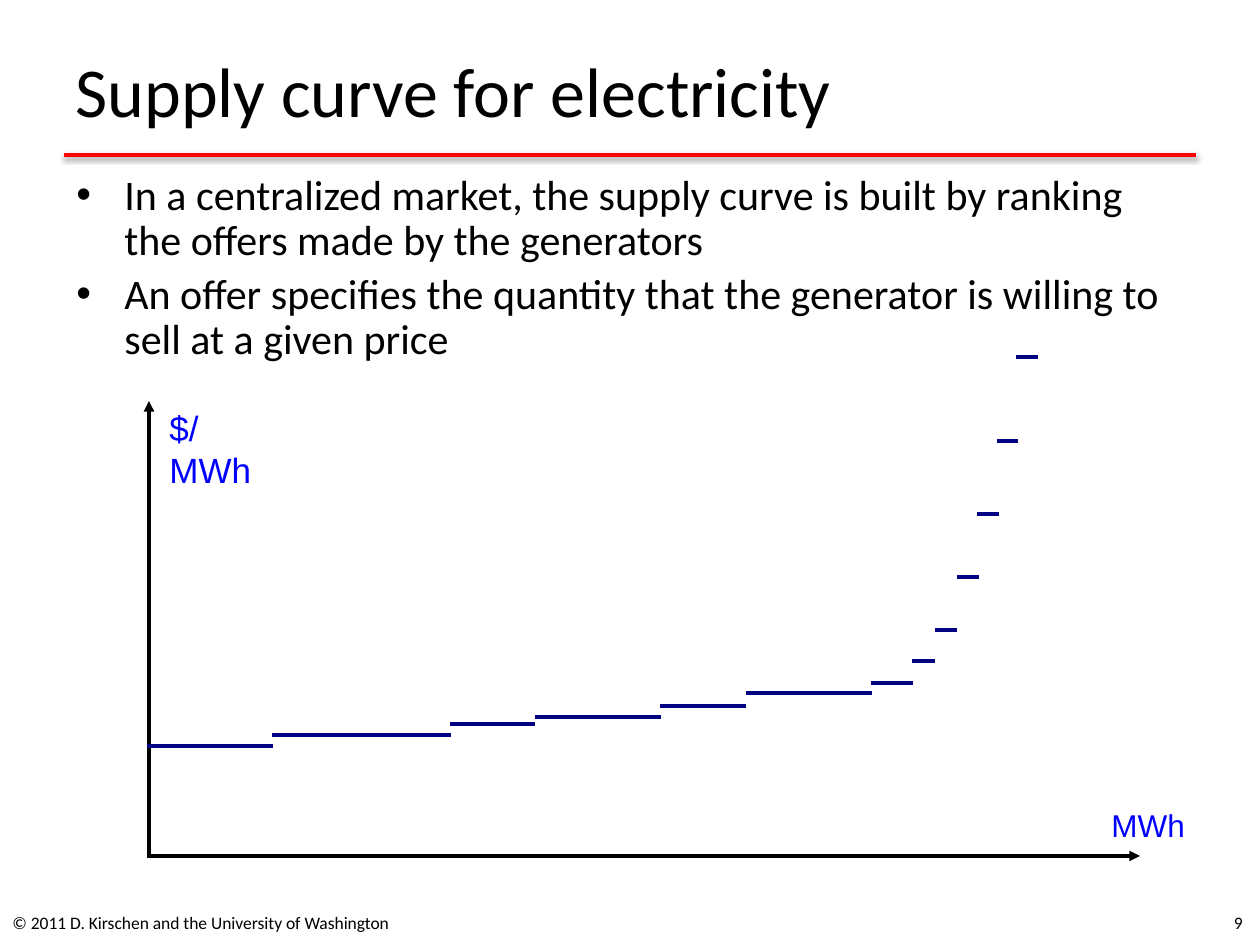
import pptx
import pptx.dml.color
import pptx.enum.shapes
import pptx.enum.text
import pptx.oxml
import pptx.oxml.ns
import pptx.util

PX = 914400 / 126  # EMU in one px
COLORS = {"text": "000000", "rule": "FF0000", "label": "0000FF", "offer": "000080"}
ALIGN = pptx.enum.text.PP_ALIGN
ANCHOR = pptx.enum.text.MSO_ANCHOR
NS = pptx.oxml.ns.nsdecls("a")


def emu(*lengths):
    return [round(length * PX) for length in lengths]


def color(name):
    return pptx.dml.color.RGBColor.from_string(COLORS[name])


class Deck:
    """Holds the style and the current slide."""

    font = "Calibri"

    def __init__(self):
        self.prs = pptx.Presentation()
        self.prs.slide_width, self.prs.slide_height = emu(1260, 945)
        self.slide = self.prs.slides.add_slide(self.prs.slide_layouts[5])

    def fill_text(self, tf, lines, size, fill="text", font=None, align=ALIGN.LEFT,
                  anchor=ANCHOR.TOP):
        tf.text = "\n".join(lines)
        tf.word_wrap = True
        tf.auto_size = pptx.enum.text.MSO_AUTO_SIZE.NONE
        tf.vertical_anchor = anchor
        for p in tf.paragraphs:
            p.alignment = align
            for r in p.runs:
                r.font.name = font or self.font
                r.font.size = pptx.util.Pt(size)
                r.font.color.rgb = color(fill)

    def title(self, box, text):
        sp = self.slide.shapes.title
        sp.left, sp.top, sp.width, sp.height = emu(*box)
        self.fill_text(sp.text_frame, [text], 40, anchor=ANCHOR.MIDDLE)

    def text(self, box, lines, size, **style):
        sp = self.slide.shapes.add_textbox(*emu(*box))
        self.fill_text(sp.text_frame, lines, size, **style)
        return sp

    def bullets(self, box, lines, size, indent):
        sp = self.text(box, lines, size)
        for p in sp.text_frame.paragraphs:
            p.line_spacing = 0.9
            p.space_before = pptx.util.Pt(size * 0.2)
            pPr = p._p.get_or_add_pPr()
            step = emu(indent)[0]
            pPr.set("marL", str(step))
            pPr.set("indent", str(-step))
            pPr.append(pptx.oxml.parse_xml(f'<a:buFont {NS} typeface="Arial"/>'))
            pPr.append(pptx.oxml.parse_xml(f'<a:buChar {NS} char="•"/>'))

    def line(self, x1, y1, x2, y2, stroke, width, arrow=False, shadow=""):
        sp = self.slide.shapes.add_connector(
            pptx.enum.shapes.MSO_CONNECTOR.STRAIGHT, *emu(x1, y1, x2, y2))
        sp.line.color.rgb = color(stroke)
        sp.line.width = pptx.util.Pt(width)
        if arrow:
            sp.line._get_or_add_ln().append(
                pptx.oxml.parse_xml(f'<a:tailEnd {NS} type="triangle"/>'))
        sp._element.spPr.append(
            pptx.oxml.parse_xml(f"<a:effectLst {NS}>{shadow}</a:effectLst>"))


def main():
    deck = Deck()

    # Title and the rule under it
    shadow = ('<a:outerShdw blurRad="39370" dist="20320" dir="5400000" rotWithShape="0">'
              '<a:srgbClr val="000000"><a:alpha val="38000"/></a:srgbClr></a:outerShdw>')
    deck.line(64, 155, 1196, 155, "rule", 2, shadow=shadow)
    deck.title((63, 16, 1134, 147), "Supply curve for electricity")

    # Explanation
    deck.bullets((64, 168, 1134, 199), [
        "In a centralized market, the supply curve is built by ranking "
        "the offers made by the generators",
        "An offer specifies the quantity that the generator is willing to "
        "sell at a given price",
    ], 24, 48)

    # Footer
    deck.text((0, 898, 412, 50), ["© 2011 D. Kirschen and the University of Washington"],
              10, anchor=ANCHOR.MIDDLE)
    deck.text((961, 898, 294, 50), ["9"], 10, align=ALIGN.RIGHT, anchor=ANCHOR.MIDDLE)

    # Axes and their labels
    deck.line(149, 856, 1140, 856, "text", 2, arrow=True)
    deck.line(149, 858, 149, 401, "text", 2, arrow=True)
    deck.text((157, 400, 110, 96), ["$/MWh"], 20, fill="label", font="Arial")
    deck.text((1099, 800, 110, 50), ["MWh"], 18, fill="label", font="Arial")

    # Offers in order of price: start, end, height
    offers = [
        (147, 273, 746), (272, 451, 735), (450, 535, 724), (535, 661, 717),
        (660, 746, 706), (746, 872, 693), (871, 913, 683), (912, 935, 661),
        (935, 957, 630), (957, 979, 577), (977, 999, 514), (997, 1018, 441),
        (1016, 1038, 357),
    ]
    for start, end, price in offers:
        deck.line(start, price, end, price, "offer", 2.25)

    deck.prs.save("out.pptx")


if __name__ == "__main__":
    main()
